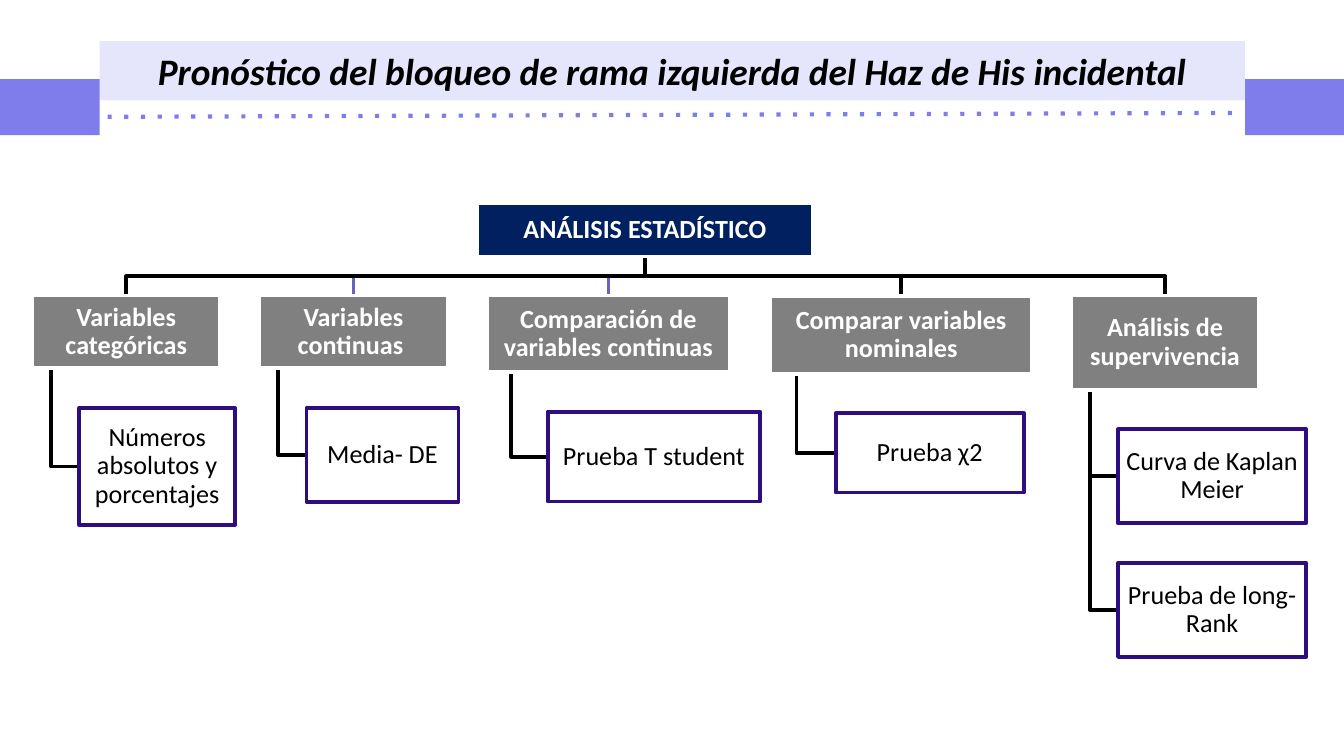
import pptx
import pptx.dml.color
import pptx.enum.shapes
import pptx.enum.text
import pptx.oxml
import pptx.oxml.ns
import pptx.util

Pt = pptx.util.Pt
RGBColor = pptx.dml.color.RGBColor
RECT = pptx.enum.shapes.MSO_SHAPE.RECTANGLE
STRAIGHT = pptx.enum.shapes.MSO_CONNECTOR.STRAIGHT
CENTER = pptx.enum.text.PP_ALIGN.CENTER
MIDDLE = pptx.enum.text.MSO_ANCHOR.MIDDLE

WHITE = RGBColor(0xFF, 0xFF, 0xFF)
BLACK = RGBColor(0x00, 0x00, 0x00)
LAVENDER = RGBColor(0xE5, 0xE5, 0xFB)
VIOLET = RGBColor(0x7F, 0x7D, 0xEB)
LINK_VIOLET = RGBColor(0x66, 0x64, 0xBC)
NAVY = RGBColor(0x00, 0x20, 0x60)
GRAY = RGBColor(0x80, 0x80, 0x80)
INDIGO = RGBColor(0x2E, 0x0D, 0x81)

FONT = "Calibri"
TITLE = "Pronóstico del bloqueo de rama izquierda del Haz de His incidental"
ROOT = (255.6, 108.7, 180, 28.8)  # left, top, width, height
BUS_Y = 148
HEAD_TOP = 158.4
GAP = 21.2  # vertical space above each test box

# Heading, left, width, height, link colour, test width, test height, tests
BRANCHES = [
    ("Variables categóricas", 17.3, 100.8, 39, BLACK, 83.5, 62.6,
     ["Números absolutos y porcentajes"]),
    ("Variables continuas ", 139, 100.8, 39, LINK_VIOLET, 81.4, 50.4,
     ["Media- DE"]),
    ("Comparación de variables continuas", 260.8, 130.3, 41, LINK_VIOLET,
     113.8, 48.2, ["Prueba T student"]),
    ("Comparar variables nominales", 412.6, 140.4, 41.8, BLACK, 100.8, 42.5,
     ["Prueba χ2"]),
    ("Análisis de supervivencia", 573.8, 100.8, 50.4, BLACK, 100.8, 50.4,
     ["Curva de Kaplan Meier", "Prueba de long-Rank"]),
]


def add_run(p, text, size, color, bold=False, italic=False):
    r = p.add_run()
    r.text = text
    r.font.name = FONT
    r.font.size = Pt(size)
    r.font.bold = bold
    r.font.italic = italic
    r.font.color.rgb = color


def add_rect(s, left, top, width, height, fill=None, line=None):
    sp = s.shapes.add_shape(RECT, Pt(left), Pt(top), Pt(width), Pt(height))
    sp.shadow.inherit = False
    if fill is None:
        sp.fill.background()
    else:
        sp.fill.solid()
        sp.fill.fore_color.rgb = fill
    if line is None:
        sp.line.fill.background()
    else:
        sp.line.color.rgb = line
        sp.line.width = Pt(2)
    return sp


def add_box(s, text, box, fill, line, color, bold):
    tf = add_rect(s, *box, fill, line).text_frame
    tf.word_wrap = True
    tf.vertical_anchor = MIDDLE
    tf.margin_left = tf.margin_right = Pt(0.7)
    tf.margin_top = tf.margin_bottom = Pt(0.7)
    p = tf.paragraphs[0]
    p.alignment = CENTER
    p.line_spacing = 0.9
    add_run(p, text, 14, color, bold)


def add_link(s, points, color):
    start, *rest = [(Pt(x), Pt(y)) for x, y in points]
    builder = s.shapes.build_freeform(*start)
    builder.add_line_segments(rest, close=False)
    sp = builder.convert_to_shape()
    sp.shadow.inherit = False
    sp.fill.background()
    sp.line.color.rgb = color
    sp.line.width = Pt(2)


def add_dotted_line(s, x1, y1, x2, y2):
    line = s.shapes.add_connector(STRAIGHT, Pt(x1), Pt(y1), Pt(x2), Pt(y2))
    line.line.color.rgb = VIOLET
    line.line.width = Pt(2.25)
    ln = line.line._get_or_add_ln()
    dash = pptx.oxml.ns.qn("a:prstDash")
    ln.append(ln.makeelement(dash, {"val": "dot"}))
    sppr = line._element.spPr
    sppr.append(sppr.makeelement(pptx.oxml.ns.qn("a:effectLst"), {}))


def set_title(s):
    sp = s.shapes.title
    sp.left, sp.top, sp.width, sp.height = Pt(53.4), Pt(22), Pt(613.6), Pt(31.7)
    sp.fill.solid()
    sp.fill.fore_color.rgb = LAVENDER
    tf = sp.text_frame
    tf.word_wrap = True
    tf.auto_size = pptx.enum.text.MSO_AUTO_SIZE.NONE
    tf.vertical_anchor = MIDDLE
    p = tf.paragraphs[0]
    p.alignment = CENTER
    add_run(p, TITLE, 20, BLACK, bold=True, italic=True)


def add_branch_links(s, left, width, height, color, test_height, tests):
    # From the root down to the heading
    root_x, root_bottom = ROOT[0] + ROOT[2] / 2, ROOT[1] + ROOT[3]
    mid = left + width / 2
    add_link(s, [(root_x, root_bottom), (root_x, BUS_Y), (mid, BUS_Y),
                 (mid, HEAD_TOP)], color)
    # From the heading to each test
    bottom, trunk = HEAD_TOP + height, left + width * 0.1
    for i in range(len(tests)):
        y = bottom + GAP + i * (test_height + GAP) + test_height / 2
        add_link(s, [(trunk, bottom), (trunk, y), (left + width / 4, y)], BLACK)


def add_branch_boxes(s, name, left, width, height, test_width, test_height, tests):
    add_box(s, name, (left, HEAD_TOP, width, height), GRAY, WHITE, WHITE, True)
    for i, test in enumerate(tests):
        top = HEAD_TOP + height + GAP + i * (test_height + GAP)
        box = (left + width / 4, top, test_width, test_height)
        add_box(s, test, box, None, INDIGO, BLACK, False)


def main():
    prs = pptx.Presentation()
    prs.slide_width, prs.slide_height = Pt(720), Pt(405)
    s = prs.slides.add_slide(prs.slide_layouts[5])

    # Title band with side bars and dotted rule
    set_title(s)
    for left in (-0.6, 667):
        add_rect(s, left, 42.4, 54, 30, VIOLET)
    add_dotted_line(s, 57.6, 62.6, 662.4, 60.5)

    # Links, right to left so that black covers the violet ones on the bus
    for name, left, width, height, color, tw, th, tests in reversed(BRANCHES):
        add_branch_links(s, left, width, height, color, th, tests)

    # Boxes
    add_box(s, "ANÁLISIS ESTADÍSTICO", ROOT, NAVY, WHITE, WHITE, True)
    for name, left, width, height, color, tw, th, tests in BRANCHES:
        add_branch_boxes(s, name, left, width, height, tw, th, tests)

    prs.save("out.pptx")


if __name__ == "__main__":
    main()
